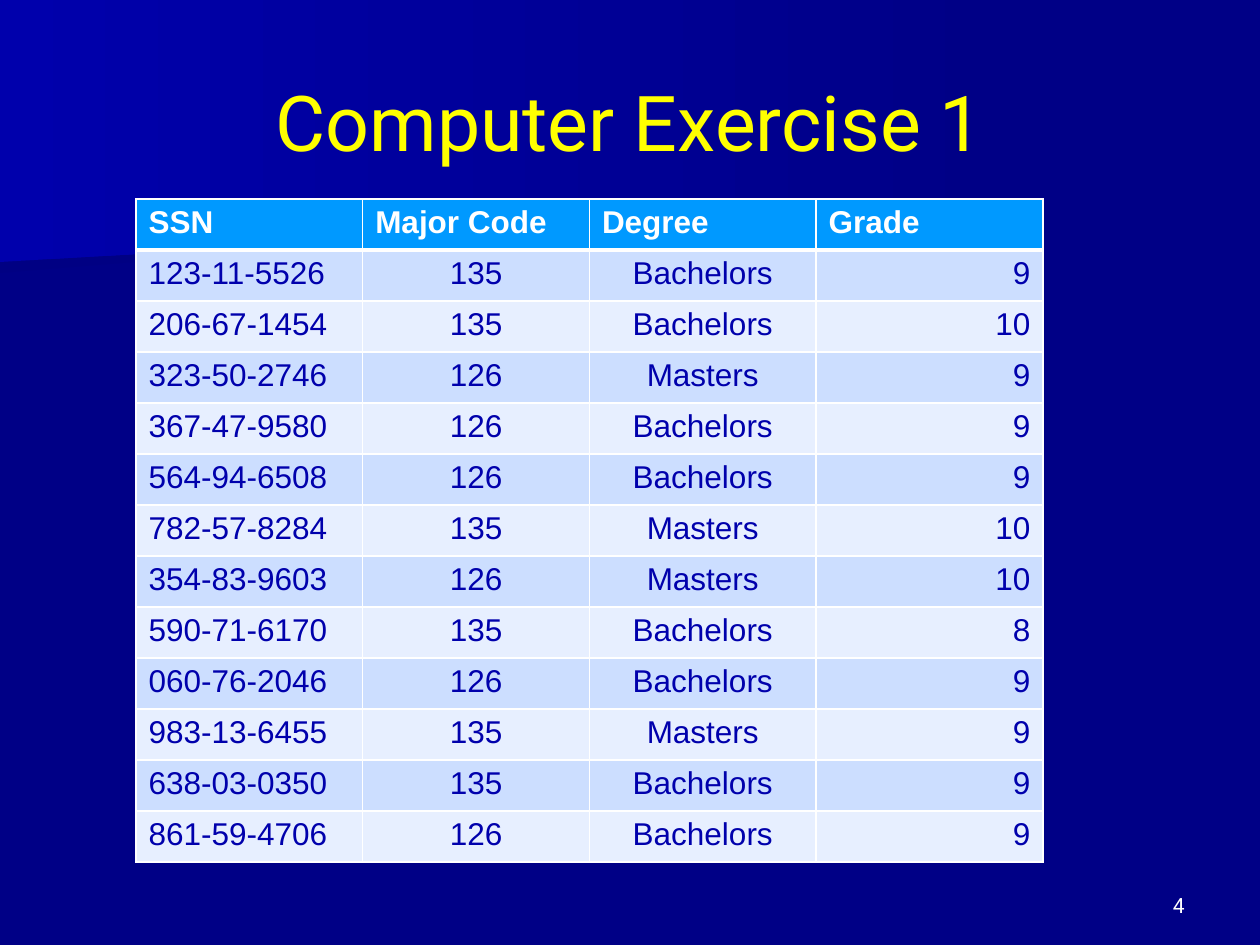
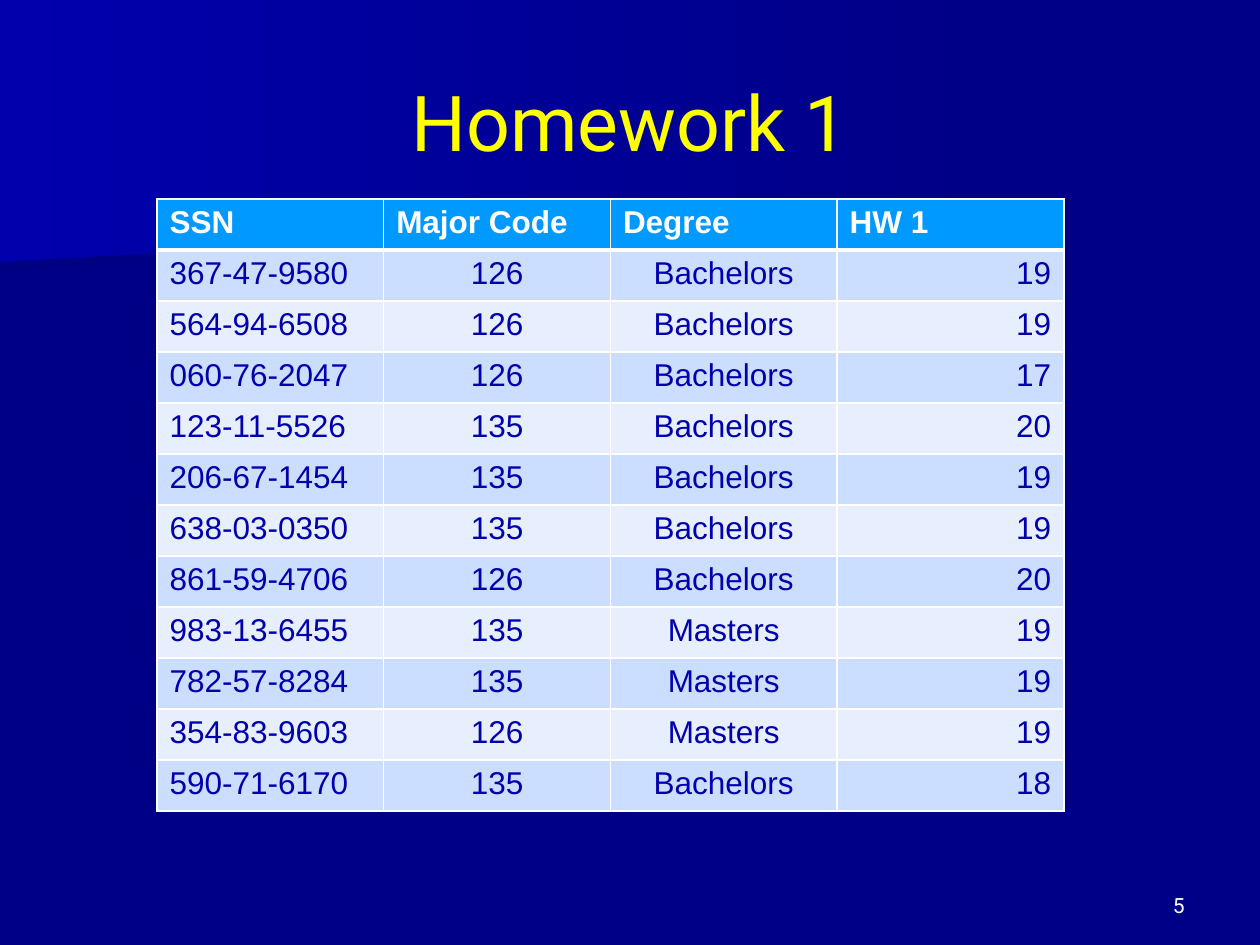
from dataclasses import dataclass

from lxml import etree
from pptx import Presentation
from pptx import util as u
from pptx.dml.color import RGBColor
from pptx.enum import text
from pptx.oxml.ns import qn

# Content: title, left edge of the table, header and rows
SLIDES = [
    {
        "title": "Computer Exercise 1",
        "number": "4",
        "table_left": 136,
        "header": ("SSN", "Major Code", "Degree", "Grade"),
        "rows": [
            ("123-11-5526", "135", "Bachelors", "9"),
            ("206-67-1454", "135", "Bachelors", "10"),
            ("323-50-2746", "126", "Masters", "9"),
            ("367-47-9580", "126", "Bachelors", "9"),
            ("564-94-6508", "126", "Bachelors", "9"),
            ("782-57-8284", "135", "Masters", "10"),
            ("354-83-9603", "126", "Masters", "10"),
            ("590-71-6170", "135", "Bachelors", "8"),
            ("060-76-2046", "126", "Bachelors", "9"),
            ("983-13-6455", "135", "Masters", "9"),
            ("638-03-0350", "135", "Bachelors", "9"),
            ("861-59-4706", "126", "Bachelors", "9"),
        ],
    },
    {
        "title": "Homework 1",
        "number": "5",
        "table_left": 157,
        "header": ("SSN", "Major Code", "Degree", "HW 1"),
        "rows": [
            ("367-47-9580", "126", "Bachelors", "19"),
            ("564-94-6508", "126", "Bachelors", "19"),
            ("060-76-2047", "126", "Bachelors", "17"),
            ("123-11-5526", "135", "Bachelors", "20"),
            ("206-67-1454", "135", "Bachelors", "19"),
            ("638-03-0350", "135", "Bachelors", "19"),
            ("861-59-4706", "126", "Bachelors", "20"),
            ("983-13-6455", "135", "Masters", "19"),
            ("782-57-8284", "135", "Masters", "19"),
            ("354-83-9603", "126", "Masters", "19"),
            ("590-71-6170", "135", "Bachelors", "18"),
        ],
    },
]


@dataclass(frozen=True)
class Theme:
    background: str = "000086"
    band_shade: str = "000083"
    band_light: str = "0000AC"
    title: str = "FFFF00"
    white: str = "FFFFFF"
    header_fill: str = "0099FF"
    row_fills: tuple = ("CCDEFF", "E7EFFF")
    cell_text: str = "0000AC"
    heading_font: str = "Roboto"
    table_font: str = "Arial"
    title_size: int = 44
    table_size: int = 18
    number_size: int = 12
    border: int = 1
    header_border: int = 3


THEME = Theme()

# Layout, in px
PX = u.Inches(1) / 126
SLIDE_SIZE = (1260, 945)
TITLE_BOX = (63, 42, 1134, 158)
NUMBER_BOX = (903, 861, 294, 63)
TABLE_TOP, TABLE_WIDTH, ROW_HEIGHT = 199, 907, 51
BANDS = [
    (THEME.band_shade, [(980, 193), (0, 273), (0, 127), (982, 127), (980, 161)]),
    (THEME.band_light, [(998, 204), (0, 262), (0, 0), (998, 0)]),
]
LEFT, CENTER, RIGHT = text.PP_ALIGN.LEFT, text.PP_ALIGN.CENTER, text.PP_ALIGN.RIGHT
COLUMN_ALIGNMENTS = (LEFT, CENTER, CENTER, RIGHT)


def px(*lengths):
    return [u.Emu(round(length * PX)) for length in lengths]


def rgb(color):
    return RGBColor.from_string(color)


def write(frame, content, *, size, color, font=THEME.heading_font, align=LEFT,
          bold=False, anchor=None):
    frame.word_wrap = True
    if anchor is not None:
        frame.vertical_anchor = anchor
    paragraph = frame.paragraphs[0]
    paragraph.alignment = align
    run = paragraph.add_run()
    run.text = content
    run.font.name, run.font.size, run.font.bold = font, u.Pt(size), bold
    run.font.color.rgb = rgb(color)


# Shared background and gradient bands
def decorate_layout(layout, slide):
    """Draw the bands with the slide's builder and hand them to its layout."""
    layout.background.fill.solid()
    layout.background.fill.fore_color.rgb = rgb(THEME.background)
    for start_color, points in BANDS:
        builder = slide.shapes.build_freeform(*points[0], scale=PX)
        builder.add_line_segments(points[1:], close=True)
        band = builder.convert_to_shape()
        band.shadow.inherit = False
        band.line.fill.background()
        band.fill.gradient()
        band.fill.gradient_angle = 0
        for stop, color in zip(band.fill.gradient_stops, (start_color, THEME.background)):
            stop.color.rgb = rgb(color)
        layout.shapes.element.append(band.element)


# Table
def set_borders(cell, top, bottom):
    properties = cell._tc.get_or_add_tcPr()
    widths = {"L": THEME.border, "R": THEME.border, "T": top, "B": bottom}
    for side, width in widths.items():
        line = etree.SubElement(properties, qn(f"a:ln{side}"), w=str(u.Pt(width)))
        fill = etree.SubElement(line, qn("a:solidFill"))
        etree.SubElement(fill, qn("a:srgbClr"), val=THEME.white)


def add_grade_table(slide, left, header, rows):
    records = [header, *rows]
    box = px(left, TABLE_TOP, TABLE_WIDTH, ROW_HEIGHT * len(records))
    table = slide.shapes.add_table(len(records), len(header), *box).table
    table.horz_banding = False
    for row_index, record in enumerate(records):
        is_header = row_index == 0
        fill = THEME.header_fill if is_header else THEME.row_fills[(row_index - 1) % 2]
        top = THEME.header_border if row_index == 1 else THEME.border
        bottom = THEME.header_border if is_header else THEME.border
        for column, value in enumerate(record):
            cell = table.cell(row_index, column)
            set_borders(cell, top, bottom)
            cell.fill.solid()
            cell.fill.fore_color.rgb = rgb(fill)
            write(cell.text_frame, value, size=THEME.table_size, font=THEME.table_font,
                  color=THEME.white if is_header else THEME.cell_text, bold=is_header,
                  align=LEFT if is_header else COLUMN_ALIGNMENTS[column])


# Slides
def add_slide(presentation, layout, content):
    slide = presentation.slides.add_slide(layout)
    title = slide.shapes.title
    title.left, title.top, title.width, title.height = px(*TITLE_BOX)
    title.text_frame.auto_size = text.MSO_AUTO_SIZE.NONE
    write(title.text_frame, content["title"], size=THEME.title_size, color=THEME.title,
          align=CENTER, anchor=text.MSO_ANCHOR.MIDDLE)
    add_grade_table(slide, content["table_left"], content["header"], content["rows"])
    number = slide.shapes.add_textbox(*px(*NUMBER_BOX))
    write(number.text_frame, content["number"], size=THEME.number_size,
          color=THEME.white, align=RIGHT, anchor=text.MSO_ANCHOR.BOTTOM)
    return slide


def main():
    presentation = Presentation()
    presentation.slide_width, presentation.slide_height = px(*SLIDE_SIZE)
    layout = presentation.slide_layouts.get_by_name("Title Only")
    slides = [add_slide(presentation, layout, content) for content in SLIDES]
    decorate_layout(layout, slides[0])
    presentation.save("out.pptx")


if __name__ == "__main__":
    main()
